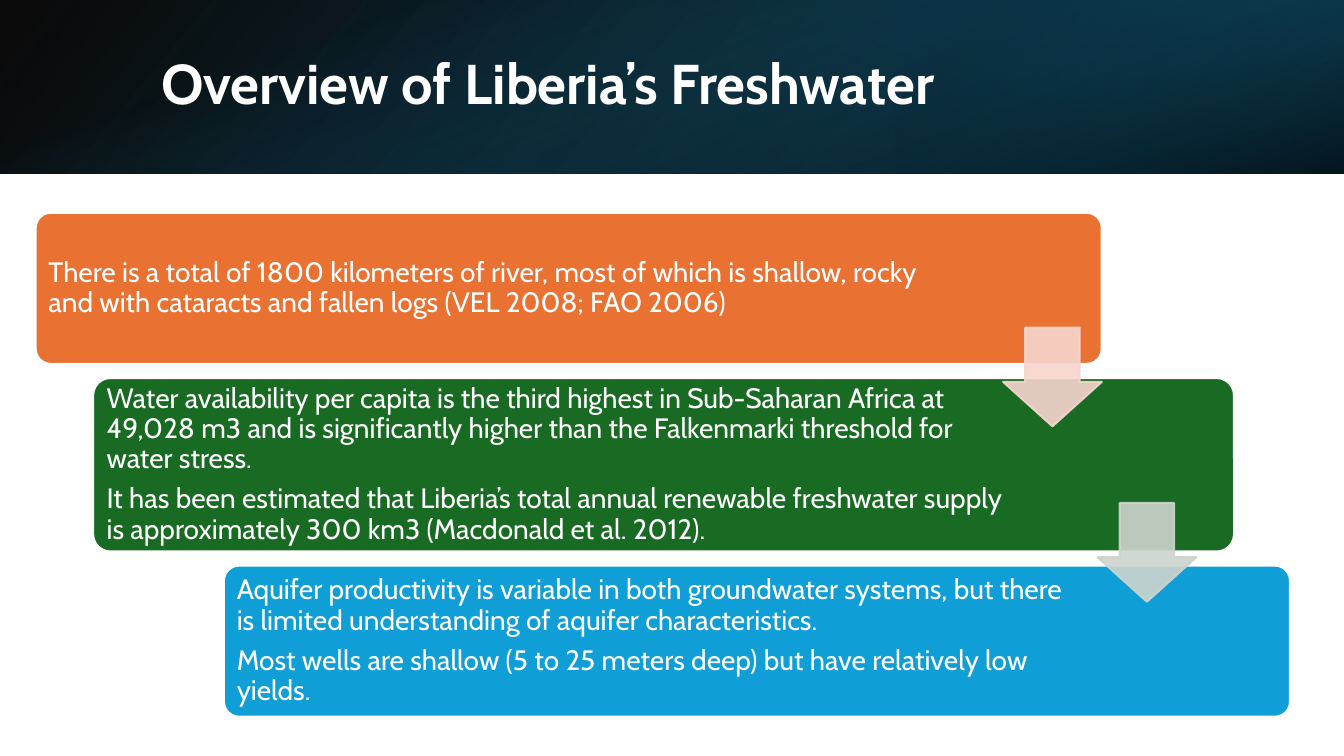
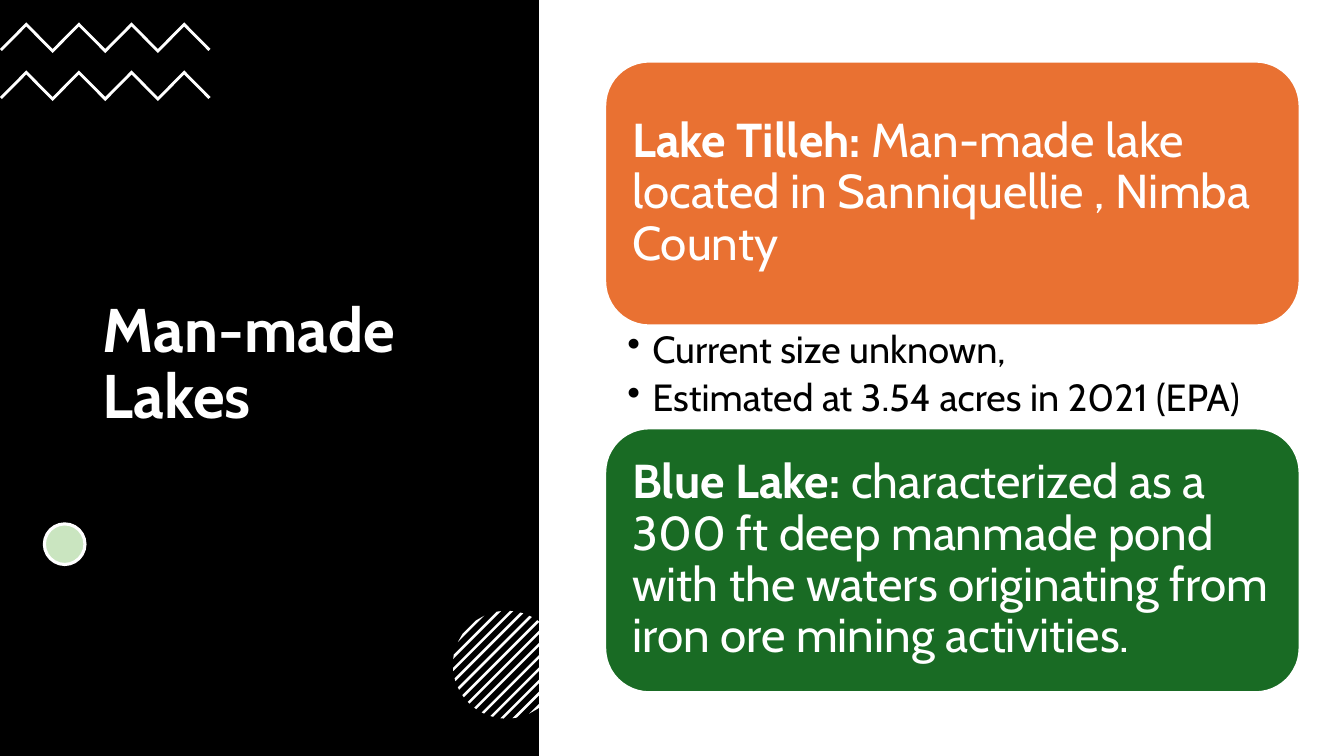
from dataclasses import dataclass
from math import sqrt

from lxml import etree
from pptx import Presentation
from pptx import util as u
from pptx.dml.color import RGBColor
from pptx.enum import shapes, text
from pptx.oxml.ns import qn

# Shared style
FONT = "Cabin"
WHITE, BLACK = "FFFFFF", "000000"
ORANGE, GREEN, BLUE = "E97132", "196B24", "0F9ED5"
PALE_GREEN = "CAE5C0"
SLIDE_WIDTH, SLIDE_HEIGHT = 960, 540
BAND_HEIGHT = 124
LINE_SPACING = 0.9
Shape = shapes.MSO_SHAPE
Anchor = text.MSO_ANCHOR


@dataclass
class Box:
    left: float
    top: float
    width: float
    height: float

    def lengths(self) -> list:
        return [u.Pt(v) for v in (self.left, self.top, self.width, self.height)]


@dataclass
class Stop:
    position: float
    color: str
    opacity: int = 100


@dataclass
class GradientLayer:
    box: Box
    stops: tuple
    angle: int
    rotation: int = 0
    flipped: bool = False


@dataclass
class Line:
    body: str
    lead: str = ""


@dataclass
class Card:
    box: Box
    color: str
    lines: list
    size: int
    corner: float
    right_gap: float = 0


@dataclass
class Arrow:
    left: float
    top: float
    color: str


def rgb(color: str) -> RGBColor:
    return RGBColor.from_string(color)


def style(shape, fill: str, line: str = "", line_width: float = 1.5) -> None:
    shape.shadow.inherit = False
    shape.fill.solid()
    shape.fill.fore_color.rgb = rgb(fill)
    if line:
        shape.line.color.rgb = rgb(line)
        shape.line.width = u.Pt(line_width)
    else:
        shape.line.fill.background()


def set_opacity(shape, percents: list) -> None:
    colors = list(shape.element.spPr.iter(qn("a:srgbClr")))
    for color, percent in zip(colors, percents):
        etree.SubElement(color, qn("a:alpha")).set("val", str(percent * 1000))


def set_frame(shape, insets: tuple, anchor):
    frame = shape.text_frame
    frame.word_wrap = True
    frame.vertical_anchor = anchor
    (frame.margin_left, frame.margin_top,
     frame.margin_right, frame.margin_bottom) = [u.Pt(v) for v in insets]
    return frame


def write(frame, lines: list, size: float, color: str, after: float = 0,
          bold: bool = False) -> None:
    for index, line in enumerate(lines):
        paragraph = frame.add_paragraph() if index else frame.paragraphs[0]
        paragraph.alignment = text.PP_ALIGN.LEFT
        paragraph.line_spacing = LINE_SPACING
        paragraph.space_after = u.Pt(after)
        font = paragraph.font
        font.name, font.size, font.bold = FONT, u.Pt(size), bold
        font.color.rgb = rgb(color)
        if line.lead:
            lead = paragraph.add_run()
            lead.text = line.lead
            lead.font.bold = True
        paragraph.add_run().text = line.body


def add_title(slide, box: Box, title: str, size: int) -> None:
    shape = slide.shapes.add_textbox(*box.lengths())
    frame = set_frame(shape, (7.2, 3.6, 7.2, 3.6), Anchor.MIDDLE)
    write(frame, [Line(title)], size, WHITE, bold=True)


def add_gradient(slide, layer: GradientLayer) -> None:
    shape = slide.shapes.add_shape(Shape.RECTANGLE, *layer.box.lengths())
    style(shape, BLACK)
    shape.fill.gradient()
    shape.fill.gradient_angle = 360 - layer.angle
    for target, stop in zip(shape.fill.gradient_stops, layer.stops):
        target.position = stop.position
        target.color.rgb = rgb(stop.color)
    set_opacity(shape, [stop.opacity for stop in layer.stops])
    shape.rotation = layer.rotation
    if layer.flipped:
        shape.element.spPr.xfrm.set("flipH", "1")


def add_card(slide, card: Card) -> None:
    shape = slide.shapes.add_shape(Shape.ROUNDED_RECTANGLE, *card.box.lengths())
    shape.adjustments[0] = card.corner
    style(shape, card.color, WHITE)
    inset = 0.3 * card.size
    frame = set_frame(shape, (inset, inset, inset + card.right_gap, inset),
                      Anchor.MIDDLE)
    write(frame, card.lines, card.size, WHITE, after=0.35 * card.size)


def add_arrow(slide, arrow: Arrow) -> None:
    box = Box(arrow.left, arrow.top, 70.5, 70.5)
    shape = slide.shapes.add_shape(Shape.DOWN_ARROW, *box.lengths())
    shape.adjustments[0], shape.adjustments[1] = 0.55, 0.45
    style(shape, arrow.color, arrow.color)
    set_opacity(shape, [90, 90])


def add_bullets(slide, box: Box, lines: list) -> None:
    shape = slide.shapes.add_textbox(*box.lengths())
    frame = set_frame(shape, (15.8, 3.6, 18.7, 3.6), Anchor.TOP)
    write(frame, lines, 27, BLACK, after=5.4)
    for paragraph in frame.paragraphs:
        properties = paragraph._p.get_or_add_pPr()
        properties.set("marL", str(u.Pt(18)))
        properties.set("indent", str(-u.Pt(18)))
        bullet = etree.Element(qn("a:buChar"), char="•")
        properties.find(qn("a:defRPr")).addprevious(bullet)


def add_outline(slide, points: list) -> None:
    corners = [(u.Pt(x), u.Pt(y)) for x, y in points]
    builder = slide.shapes.build_freeform(*corners[0])
    builder.add_line_segments(corners[1:], close=True)
    style(builder.convert_to_shape(), WHITE)


def add_zigzag(slide, top: float) -> None:
    step, rise, thickness, peaks = 18.8, 19, 2.9, 4
    ridge = [(i * step, top + (0 if i % 2 else rise))
             for i in range(2 * peaks + 1)]
    end, half = ridge[-1][0], thickness / 2
    under = [(x, y + thickness) for x, y in ridge[1:-1]]
    points = ridge + [(end - half, top + rise + half)] + under[::-1]
    add_outline(slide, points + [(half, top + rise + half)])


def add_striped_circle(slide, center_x: float, center_y: float,
                       radius: float) -> None:
    gap, thickness, side_count = 6.17, 1.85, 6
    for number in range(-side_count, side_count + 1):
        points = []
        for side in (-1, 1):
            distance = number * gap + side * thickness / 2
            half_chord = sqrt(radius ** 2 - distance ** 2)
            ends = [(center_x + (distance + h) / sqrt(2),
                     center_y + (distance - h) / sqrt(2))
                    for h in (half_chord, -half_chord)]
            points += ends[::side]
        add_outline(slide, points)


def build_freshwater(slide) -> None:
    # Layered title band
    third = SLIDE_WIDTH / 3
    middle = (SLIDE_WIDTH - BAND_HEIGHT) / 2
    layers = [
        GradientLayer(Box(0, 0, SLIDE_WIDTH, BAND_HEIGHT),
                      (Stop(0, BLACK, 96), Stop(1, "104862")), 140, flipped=True),
        GradientLayer(Box(2 * third, 0, third, BAND_HEIGHT),
                      (Stop(0.19, "0B3041", 68), Stop(1, "156082", 79)),
                      320, rotation=180, flipped=True),
        GradientLayer(Box(middle, -middle, BAND_HEIGHT, SLIDE_WIDTH),
                      (Stop(0.23, "156082", 0), Stop(0.99, BLACK, 74)),
                      340, rotation=90),
    ]
    for layer in layers:
        add_gradient(slide, layer)
    add_title(slide, Box(108, 27.4, 790, 69), "Overview of Liberia’s Freshwater", 40)

    # Staggered cards
    cards = [
        Card(Box(25.5, 152, 761.5, 108), ORANGE, [
            Line("There is a total of 1800 kilometers of river, most of which is "
                 "shallow, rocky and with cataracts and fallen logs "
                 "(VEL 2008; FAO 2006)")], 20, 0.1, 110.5),
        Card(Box(66.5, 270, 815, 124), GREEN, [
            Line("Water availability per capita is the third highest in Sub-Saharan "
                 "Africa at 49,028 m3 and is significantly higher than the "
                 "Falkenmarki threshold for water stress."),
            Line("It has been estimated that Liberia’s total annual renewable "
                 "freshwater supply is approximately 300 km3 "
                 "(Macdonald et al. 2012).")], 20, 0.1, 147.5),
        Card(Box(160, 404, 761.5, 108), BLUE, [
            Line("Aquifer productivity is variable in both groundwater systems, but "
                 "there is limited understanding of aquifer characteristics."),
            Line("Most wells are shallow (5 to 25 meters deep) but have relatively "
                 "low yields.")], 20, 0.1, 138),
    ]
    for card in cards:
        add_card(slide, card)

    # Arrows between cards
    for arrow in (Arrow(716.5, 234, "F7D5CE"), Arrow(784, 359.3, "CCD4CD")):
        add_arrow(slide, arrow)


def build_lakes(slide) -> None:
    # Dark title panel
    panel = slide.shapes.add_shape(Shape.RECTANGLE,
                                   *Box(0, 0, 385, SLIDE_HEIGHT).lengths())
    style(panel, BLACK)
    add_title(slide, Box(66.5, 94.5, 252, 333), "Man-made Lakes", 44)

    # Panel ornaments
    for top in (16, 50.3):
        add_zigzag(slide, top)
    dot = slide.shapes.add_shape(Shape.OVAL, *Box(31.7, 374.2, 29, 29).lengths())
    style(dot, PALE_GREEN, WHITE, 2.25)
    add_striped_circle(slide, 362, 474.8, 38.5)

    # Lake cards and details
    left, width, height = 432.3, 496, 188.5
    lakes = [
        (44, ORANGE, Line("Man-made lake located in Sanniquellie , Nimba County",
                          "Lake Tilleh: ")),
        (306, GREEN, Line("characterized as a 300 ft deep manmade pond with the "
                          "waters originating from iron ore mining activities.",
                          "Blue Lake: ")),
    ]
    for top, color, line in lakes:
        add_card(slide, Card(Box(left, top, width, height), color, [line],
                             34, 0.1667))
    add_bullets(slide, Box(left, 232.5, width, 73.5),
                [Line("Current size unknown,"),
                 Line("Estimated at 3.54 acres in 2021 (EPA)")])


def main() -> None:
    presentation = Presentation()
    presentation.slide_width = u.Pt(SLIDE_WIDTH)
    presentation.slide_height = u.Pt(SLIDE_HEIGHT)
    blank = presentation.slide_layouts[6]
    for build in (build_freshwater, build_lakes):
        build(presentation.slides.add_slide(blank))
    presentation.save("out.pptx")


if __name__ == "__main__":
    main()
